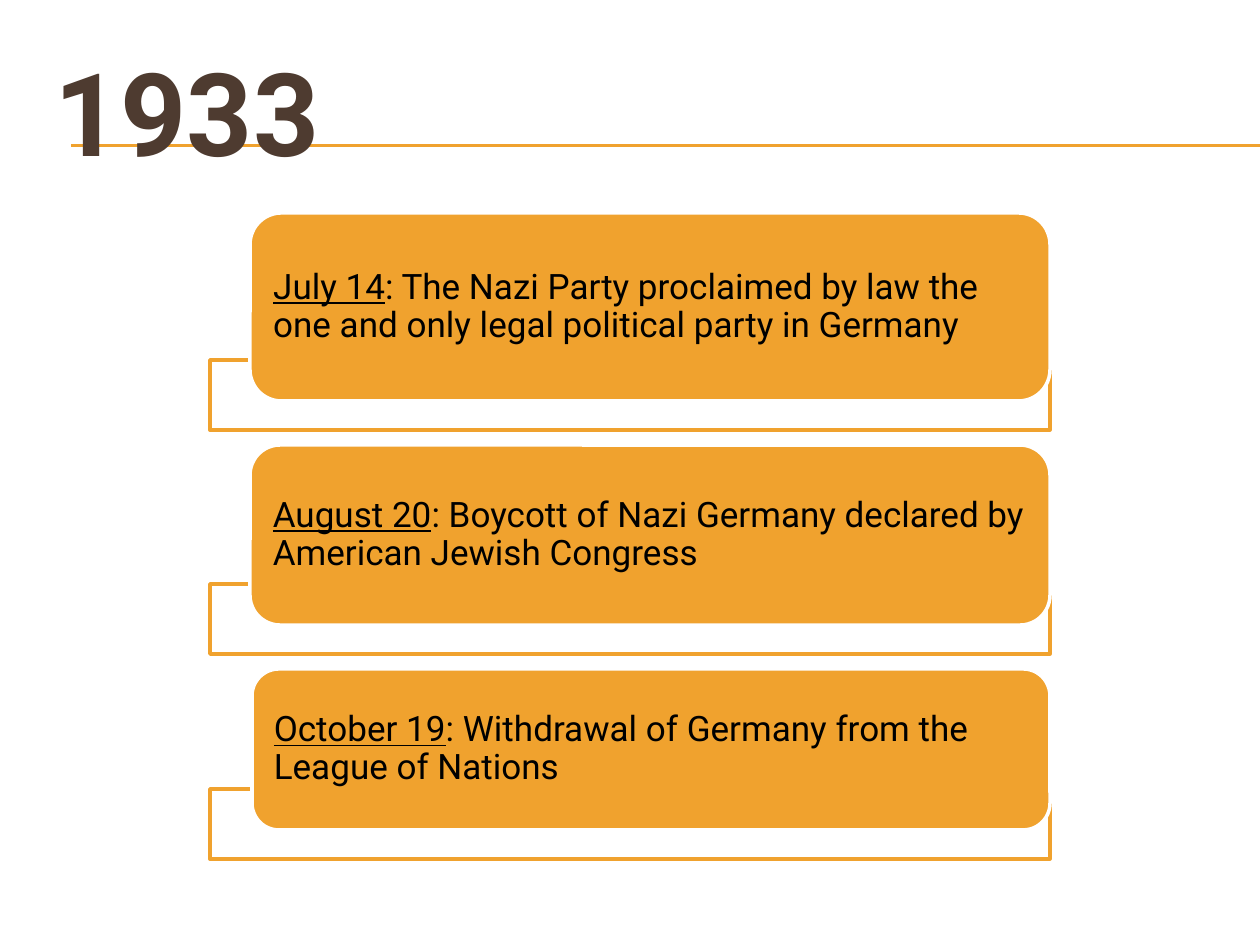
from lxml.etree import SubElement
from pptx import Presentation
from pptx.dml.color import RGBColor
from pptx.enum.shapes import MSO_CONNECTOR, MSO_SHAPE
from pptx.enum.text import MSO_ANCHOR, MSO_AUTO_SIZE, PP_ALIGN
from pptx.oxml.ns import qn
from pptx.util import Emu, Pt

YEAR = "1933"
EVENTS = [  # date, what happened, card left, card height
    ("July 14", ": The Nazi Party proclaimed by law the one and only legal political party in Germany", 250, 188),
    ("August 20", ": Boycott of Nazi Germany declared by American Jewish Congress", 250, 180),
    ("October 19", ": Withdrawal of Germany from the League of Nations", 252, 161),
]
COLORS = {"amber": "F0A22E", "brown": "4E3B30", "black": "000000", "white": "FFFFFF"}
FONT = "Roboto"

FIRST_TOP, CARD_RIGHT = 213, 1050
FRAME_LEFT, FRAME_WIDTH, FRAME_HEIGHT = 210, 840, 70
OVERLAP, GAP = 41, 15
RULE_LEFT, RULE_TOPS = 71, (145, 146)
SLIDE_WIDTH, SLIDE_HEIGHT = 1260, 945


def px(length):
    return Emu(round(length * 914400 / 126))


def rgb(name):
    return RGBColor.from_string(COLORS[name])


def add_text(paragraph, text, *, size, color, bold=False, underline=False):
    run = paragraph.add_run()
    run.text = text
    font = run.font
    font.name, font.size = FONT, Pt(size)
    font.bold, font.underline = bold, underline
    font.color.rgb = rgb(color)


def add_box(slide, preset, left, top, width, height, *, fill, line):
    box = slide.shapes.add_shape(preset, px(left), px(top), px(width), px(height))
    box.shadow.inherit = False
    box.fill.solid()
    box.fill.fore_color.rgb = rgb(fill)
    box.line.color.rgb = rgb(line)
    box.line.width = Pt(2)
    return box


def add_rule(slide, top):
    rule = slide.shapes.add_connector(
        MSO_CONNECTOR.STRAIGHT, px(RULE_LEFT), px(top), px(SLIDE_WIDTH), px(top))
    rule.line.color.rgb = rgb("amber")
    rule.line.width = Pt(0.75)
    SubElement(rule._element.spPr, qn("a:effectLst"))


def add_title(slide):
    title = slide.shapes.title
    title.left, title.top, title.width, title.height = px(42), px(21), px(1197), px(179)
    frame = title.text_frame
    frame.auto_size = MSO_AUTO_SIZE.NONE
    frame.vertical_anchor = MSO_ANCHOR.MIDDLE
    frame.paragraphs[0].alignment = PP_ALIGN.LEFT
    add_text(frame.paragraphs[0], YEAR, size=66, color="brown", bold=True)
    # The year stands in front of the rules
    slide.shapes._spTree.append(title._element)


def add_event(slide, date, event, left, top, height):
    """Draw one event and return the bottom of its frame."""
    frame_top = top + height - OVERLAP
    frame = add_box(slide, MSO_SHAPE.RECTANGLE, FRAME_LEFT, frame_top,
                    FRAME_WIDTH, FRAME_HEIGHT, fill="white", line="amber")
    white = frame._element.spPr.find(qn("a:solidFill"))[0]
    SubElement(white, qn("a:alpha"), val="90000")

    card = add_box(slide, MSO_SHAPE.ROUNDED_RECTANGLE, left, top,
                   CARD_RIGHT - left, height, fill="amber", line="white")
    text = card.text_frame
    text.word_wrap = True
    text.vertical_anchor = MSO_ANCHOR.MIDDLE
    text.margin_left = text.margin_right = px(14)
    text.margin_top = text.margin_bottom = 0
    paragraph = text.paragraphs[0]
    paragraph.alignment = PP_ALIGN.LEFT
    paragraph.line_spacing = 0.9
    add_text(paragraph, date, size=20, color="black", underline=True)
    add_text(paragraph, event, size=20, color="black")
    return frame_top + FRAME_HEIGHT


def main():
    deck = Presentation()
    deck.slide_width, deck.slide_height = px(SLIDE_WIDTH), px(SLIDE_HEIGHT)
    slide = deck.slides.add_slide(deck.slide_layouts[5])
    for rule_top in RULE_TOPS:
        add_rule(slide, rule_top)
    add_title(slide)
    top = FIRST_TOP
    for date, event, left, height in EVENTS:
        top = add_event(slide, date, event, left, top, height) + GAP
    deck.save("out.pptx")


if __name__ == "__main__":
    main()
